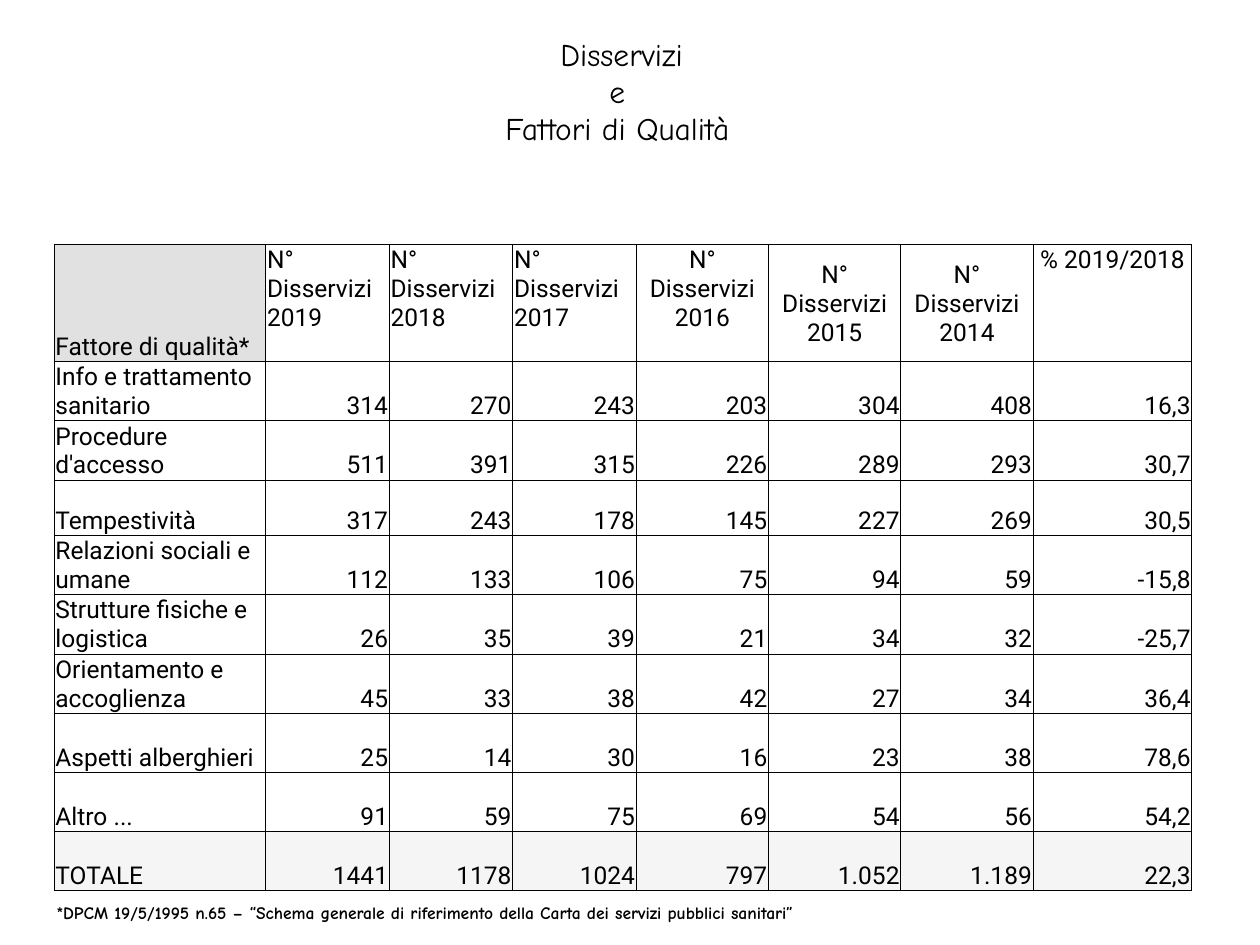
from lxml import etree
from pptx import Presentation
from pptx.dml.color import RGBColor
from pptx.enum import text
from pptx.oxml import ns
from pptx.util import Inches, Pt

BLACK = RGBColor(0x00, 0x00, 0x00)
WHITE = RGBColor(0xFF, 0xFF, 0xFF)
HEADER_GREY = RGBColor(0xE1, 0xE1, 0xE1)
TOTAL_GREY = RGBColor(0xF5, 0xF5, 0xF5)

LEFT, CENTER, RIGHT = text.PP_ALIGN.LEFT, text.PP_ALIGN.CENTER, text.PP_ALIGN.RIGHT
TOP, MIDDLE, BOTTOM = (text.MSO_ANCHOR.TOP, text.MSO_ANCHOR.MIDDLE,
                       text.MSO_ANCHOR.BOTTOM)

YEARS = [2019, 2018, 2017, 2016, 2015, 2014]
HEADERS = ["Fattore di qualità*", *(f"N° Disservizi {y}" for y in YEARS), "% 2019/2018"]
HEADER_ALIGN = [LEFT] * 4 + [CENTER] * 4
HEADER_ANCHOR = [BOTTOM] + [TOP] * 4 + [MIDDLE] * 2 + [TOP]
FACTORS = [
    ["Info e trattamento sanitario", "314", "270", "243", "203", "304", "408", "16,3"],
    ["Procedure d'accesso", "511", "391", "315", "226", "289", "293", "30,7"],
    ["Tempestività", "317", "243", "178", "145", "227", "269", "30,5"],
    ["Relazioni sociali e umane", "112", "133", "106", "75", "94", "59", "-15,8"],
    ["Strutture fisiche e logistica", "26", "35", "39", "21", "34", "32", "-25,7"],
    ["Orientamento e accoglienza", "45", "33", "38", "42", "27", "34", "36,4"],
    ["Aspetti alberghieri", "25", "14", "30", "16", "23", "38", "78,6"],
    ["Altro ...", "91", "59", "75", "69", "54", "56", "54,2"],
    ["TOTALE", "1441", "1178", "1024", "797", "1.052", "1.189", "22,3"],
]
COL_WIDTHS = [1.68] + [0.98] * 3 + [1.05] * 3 + [1.26]
ROW_HEIGHTS = [0.93, 0.47, 0.47, 0.44] + [0.47] * 6


def add_run(p, wording, font, size, bold=False):
    r = p.add_run()
    r.text = wording
    r.font.name = font
    r.font.size = Pt(size)
    r.font.bold = bold
    r.font.color.rgb = BLACK


def add_text(s, box, paragraphs, size, align, bold=False):
    tf = s.shapes.add_textbox(*map(Inches, box)).text_frame
    tf.word_wrap = True
    for i, runs in enumerate(paragraphs):
        p = tf.paragraphs[0] if i == 0 else tf.add_paragraph()
        p.alignment = align
        p.line_spacing = 0.8
        p.space_before = Pt(size * 0.2)
        for wording, font in runs:
            add_run(p, wording, font, size, bold)


def set_borders(cell, top, bottom):
    props = cell._tc.get_or_add_tcPr()
    widths = {"a:lnL": 0.5, "a:lnR": 0.5, "a:lnT": top, "a:lnB": bottom}
    for i, (tag, width) in enumerate(widths.items()):
        ln = etree.Element(ns.qn(tag), w=str(Pt(width)))
        fill = etree.SubElement(ln, ns.qn("a:solidFill"))
        etree.SubElement(fill, ns.qn("a:srgbClr"), val=str(BLACK))
        props.insert(i, ln)


def fill_cell(cell, wording, align, anchor, color):
    cell.margin_left = cell.margin_right = cell.margin_top = Inches(0.01)
    cell.margin_bottom = 0
    cell.vertical_anchor = anchor
    cell.fill.solid()
    cell.fill.fore_color.rgb = color
    p = cell.text_frame.paragraphs[0]
    p.alignment = align
    add_run(p, wording, "Roboto", 14)


def add_factor_table(s):
    rows = [HEADERS, *FACTORS]
    last = len(rows) - 1
    frame = s.shapes.add_table(
        len(rows), len(HEADERS), Inches(0.43), Inches(1.94),
        Inches(sum(COL_WIDTHS)), Inches(sum(ROW_HEIGHTS)))
    table = frame.table
    table.first_row = table.horz_banding = False
    for column, width in zip(table.columns, COL_WIDTHS):
        column.width = Inches(width)
    for row, height in zip(table.rows, ROW_HEIGHTS):
        row.height = Inches(height)
    for i, row in enumerate(rows):
        for j, wording in enumerate(row):
            align, anchor = (LEFT if j == 0 else RIGHT), BOTTOM
            color = TOTAL_GREY if i == last else WHITE
            if i == 0:
                align, anchor = HEADER_ALIGN[j], HEADER_ANCHOR[j]
                color = HEADER_GREY if j == 0 else WHITE
            cell = table.cell(i, j)
            fill_cell(cell, wording, align, anchor, color)
            top = 1 if i >= last - 1 or i == j == 0 else 0.5
            set_borders(cell, top, 1 if i >= last - 2 else 0.5)


def main():
    prs = Presentation()
    prs.slide_width, prs.slide_height = Inches(10), Inches(7.5)
    s = prs.slides.add_slide(prs.slide_layouts[6])
    add_factor_table(s)
    add_text(s, (2.4, 0.29, 5, 0.95),
             [[(" ", "Arial"), ("Disservizi", "Comic Neue")],
              [("e", "Comic Neue")],
              [("Fattori di Qualità", "Comic Neue")]], 18, CENTER)
    add_text(s, (0.35, 7.14, 8.98, 0.24),
             [[("*DPCM 19/5/1995 n.65 – “Schema generale di riferimento "
                "della Carta dei servizi pubblici sanitari”", "Comic Neue")]],
             10, LEFT, bold=True)
    prs.save("out.pptx")


if __name__ == "__main__":
    main()
